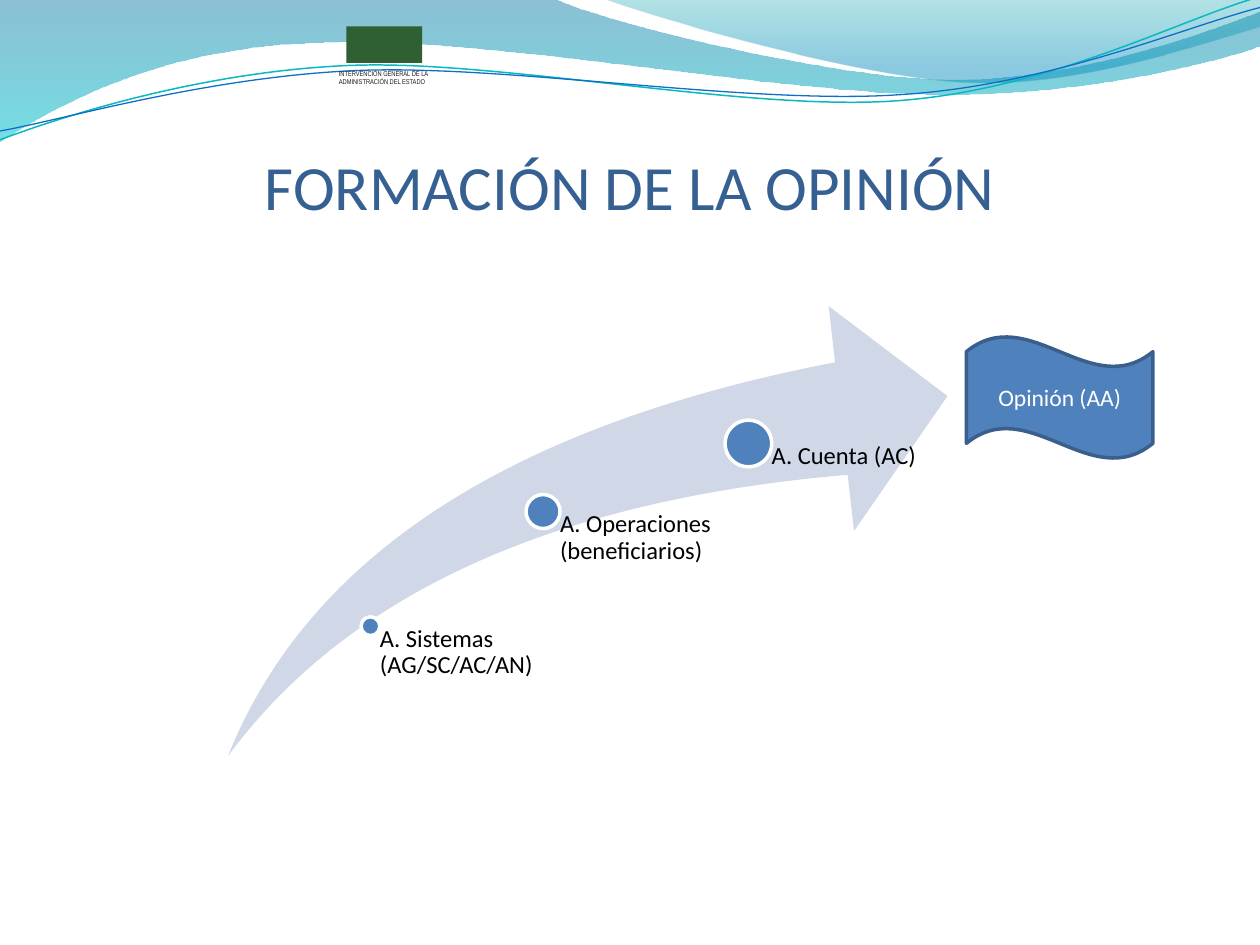
from lxml.etree import SubElement
from pptx import Presentation
from pptx.dml.color import RGBColor
from pptx.enum.shapes import MSO_SHAPE
from pptx.enum.text import MSO_ANCHOR, PP_ALIGN
from pptx.oxml.ns import qn
from pptx.util import Inches, Pt

# Theme: colours and type sizes
THEME = {
    "font": "Calibri", "small font": "Arial Narrow",
    "title": "376092", "ink": "000000", "mark": "2E6033", "mark ink": "1F1A17",
    "arrow": "D0D8E8", "dot": "4F81BD", "edge": "3A5F8C", "white": "FFFFFF",
    "title size": 36, "step size": 14, "flag size": 13.5, "mark size": 4,
}

# Content: lengths in grid units, on 10 columns by 7.5 rows
COLS, ROWS = 10, 7.5
TITLE = "FORMACIÓN DE LA OPINIÓN"
MARK = "INTERVENCIÓN GENERAL DE LA\nADMINISTRACIÓN DEL ESTADO"
FLAG = "Opinión (AA)"
STEPS = [  # text, dot centre, dot size, text width
    ("A. Sistemas (AG/SC/AC/AN)", (2.94, 4.97), 0.15, 1.33),
    ("A. Operaciones (beneficiarios)", (4.31, 4.06), 0.27, 1.37),
    ("A. Cuenta (AC)", (5.94, 3.52), 0.37, 1.37),
]
ARROW = (1.81, 2.43, 5.71, 3.57)

# Each path is a list of points; six numbers are a curve, two a straight line
BANDS = [  # path, gradient stops (place, colour, opacity)
    ([(0, 0), (4.4, -0.01), (4.76, 0.17, 6.64, 0.63, 7.58, 0.63),
      (8.53, 0.63, 9.58, 0.26, 10, 0.09), (10.01, 0.36),
      (9.83, 0.44, 8.7, 0.76, 7.46, 0.75), (6.22, 0.75, 3.82, 0.28, 2.57, 0.34),
      (1.29, 0.36, 0.46, 0.83, -0.01, 1.13)],
     [(0, "0074A1", 45), (1, "00C6CF", 55)]),
    ([(4.79, -0.01), (5.09, 0.11, 6.82, 0.62, 7.69, 0.65),
      (8.56, 0.69, 9.61, 0.32, 10, 0.21), (10, 0)],
     [(0, "00A1A9", 30), (0.8, "008BBF", 45)]),
]
WAVES = [  # path, colour, line width
    ([(0, 1.11), (0.48, 0.93, 1.58, 0.57, 2.77, 0.52),
      (3.95, 0.47, 5.93, 0.89, 7.13, 0.8), (8.33, 0.71, 9.38, 0.15, 9.98, -0.02)],
     "0AB8BF", 0.85),
    ([(0, 1.04), (0.47, 0.96, 1.64, 0.61, 2.83, 0.56),
      (4.03, 0.51, 5.97, 0.84, 7.17, 0.75), (8.36, 0.67, 9.41, 0.21, 10, 0.06)],
     "0F6FC6", 0.75),
]

prs = Presentation()
prs.slide_width, prs.slide_height = Inches(10), Inches(7.5)
col, row = prs.slide_width / COLS, prs.slide_height / ROWS
slide = prs.slides.add_slide(prs.slide_layouts[6])
shapes = slide.shapes


def rgb(name):
    return RGBColor.from_string(THEME.get(name, name))


def place(x, y, w, h):
    return [round(n) for n in (x * col, y * row, w * col, h * row)]


def trace(path, count=32):
    """Turn lines and cubic curves into a list of points."""
    spots = [path[0]]
    for part in path[1:]:
        if len(part) == 2:
            spots.append(part)
            continue
        ends = [spots[-1], part[:2], part[2:4], part[4:]]
        for i in range(1, count + 1):
            t = i / count
            mix = ((1 - t) ** 3, 3 * t * (1 - t) ** 2, 3 * t * t * (1 - t), t ** 3)
            spots.append(tuple(sum(m * p[k] for m, p in zip(mix, ends)) for k in (0, 1)))
    return [(x * col, y * row) for x, y in spots]


def draw(path, close):
    first, *rest = trace(path)
    pen = shapes.build_freeform(*first)
    pen.add_line_segments(rest, close=close)
    shape = pen.convert_to_shape()
    shape.shadow.inherit = False
    return shape


def add(kind, box, fill, line=None):
    shape = shapes.add_shape(kind, *place(*box))
    shape.shadow.inherit = False
    shape.fill.solid()
    shape.fill.fore_color.rgb = rgb(fill)
    if line:
        shape.line.color.rgb = rgb(line)
        shape.line.width = Pt(2)
    else:
        shape.line.fill.background()
    return shape


def write(shape, text, size, color, font="font", align=PP_ALIGN.LEFT,
          anchor=MSO_ANCHOR.TOP, inset=None, wrap=True, space=None):
    frame = shape.text_frame
    frame.word_wrap, frame.vertical_anchor = wrap, anchor
    if inset is not None:
        frame.margin_left = round(inset * col)
        frame.margin_top = frame.margin_right = frame.margin_bottom = 0
    frame.text = text
    for para in frame.paragraphs:
        para.alignment, para.line_spacing = align, space
        for run in para.runs:
            run.font.name, run.font.size = THEME[font], Pt(THEME[size])
            run.font.color.rgb = rgb(color)


# Bands and waves along the top
for path, stops in BANDS:
    band = draw(path, True)
    band.line.fill.background()
    band.fill.gradient()
    band.fill.gradient_angle = 270
    for stop, (spot, color, share) in zip(band.fill.gradient_stops, stops):
        stop.position, stop.color.rgb = spot, rgb(color)
    tints = band.fill._xPr.iter(qn("a:srgbClr"))
    for tint, (_, _, share) in zip(list(tints), stops):
        SubElement(tint, qn("a:alpha"), val=str(share * 1000))
for path, color, width in WAVES:
    wave = draw(path, False)
    wave.fill.background()
    wave.line.color.rgb, wave.line.width = rgb(color), Pt(width)

# Plain emblem with its caption
add(MSO_SHAPE.RECTANGLE, (2.75, 0.21, 0.6, 0.29), "mark")
write(shapes.add_textbox(*place(2.69, 0.55, 0.73, 0.13)), MARK, "mark size",
      "mark ink", "small font", inset=0, wrap=False)

# Title
write(shapes.add_textbox(*place(0.69, 0.99, 8.62, 0.96)), TITLE, "title size",
      "title", align=PP_ALIGN.CENTER, anchor=MSO_ANCHOR.MIDDLE)

# Rising arrow with its steps; each text hangs from the centre of its dot
arrow = add(MSO_SHAPE.SWOOSH_ARROW, ARROW, "arrow")
arrow.adjustments[0] = arrow.adjustments[1] = 0.25
base = ARROW[1] + ARROW[3]
for text, (x, y), size, width in STEPS:
    half = size / 2
    add(MSO_SHAPE.OVAL, (x - half, y - half, size, size), "dot", "white")
    write(shapes.add_textbox(*place(x, y, width, base - y)), text, "step size",
          "ink", inset=half, space=0.9)

# Flag with the outcome
flag = add(MSO_SHAPE.WAVE, (7.67, 2.67, 1.48, 0.97), "dot", "edge")
write(flag, FLAG, "flag size", "white", align=PP_ALIGN.CENTER, anchor=MSO_ANCHOR.MIDDLE)

prs.save("out.pptx")
